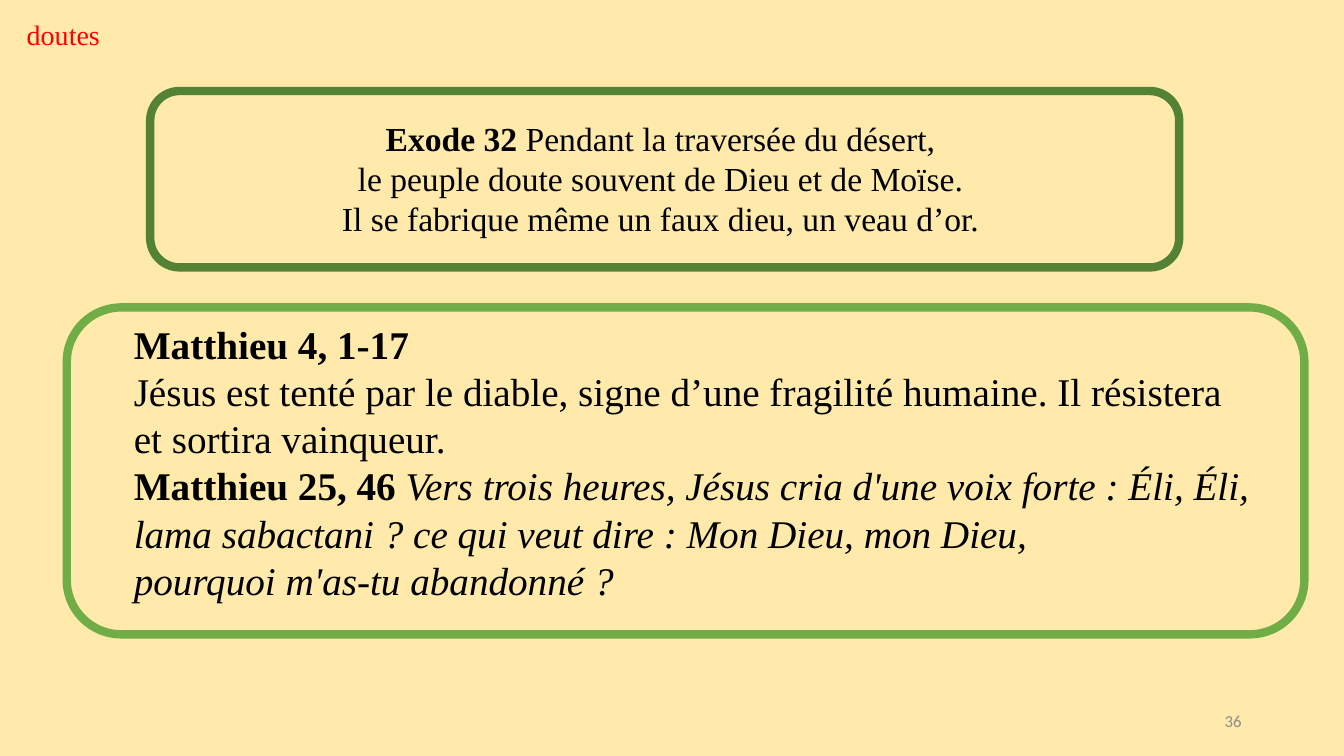
from pptx import Presentation
from pptx.dml.color import RGBColor
from pptx.enum.shapes import MSO_SHAPE
from pptx.enum.text import MSO_ANCHOR, PP_ALIGN
from pptx.util import Pt

COLORS = {
    "back": "FFEAAB",
    "label": "FF0000",
    "text": "000000",
    "number": "8C8C8C",
    "exodus": "548235",
    "matthew": "70AD47",
}
SERIF = "Times New Roman"

EXODUS = [
    [("Exode 32 ", "b"), ("Pendant la traversée du désert, ", "")],
    [("le peuple doute souvent de Dieu et de Moïse. ", "")],
    [("Il se fabrique même un faux dieu, un veau d’or. ", "")],
]
MATTHEW = [
    [("Matthieu 4, 1-17", "b")],
    [("Jésus est tenté par le diable, signe d’une fragilité humaine. "
      "Il résistera et sortira vainqueur.", "")],
    [("Matthieu 25, 46 ", "b"),
     ("Vers trois heures, Jésus cria d'une voix forte : Éli, Éli, "
      "lama sabactani ? ce qui veut dire : Mon Dieu, mon Dieu,", "i")],
    [("pourquoi m'as-tu abandonné ?", "i")],
]


def color(name):
    return RGBColor.from_string(COLORS[name])


def add_text(shapes, box, lines, size, tint="text", font=SERIF,
             align=PP_ALIGN.LEFT, anchor=MSO_ANCHOR.TOP):
    frame = shapes.add_textbox(*map(Pt, box)).text_frame
    frame.word_wrap = True
    frame.vertical_anchor = anchor
    for index, line in enumerate(lines):
        para = frame.add_paragraph() if index else frame.paragraphs[0]
        para.alignment = align
        para.font.name = font
        para.font.size = Pt(size)
        para.font.color.rgb = color(tint)
        for words, style in line:
            run = para.add_run()
            run.text = words
            if style == "b":
                run.font.bold = True
            elif style == "i":
                run.font.italic = True


def add_panel(slide, box, tint, inset, lines, size, align):
    shapes = slide.shapes.add_group_shape().shapes
    frame = shapes.add_shape(MSO_SHAPE.ROUNDED_RECTANGLE, *map(Pt, box))
    frame.shadow.inherit = False
    frame.fill.background()
    frame.line.color.rgb = color(tint)
    frame.line.width = Pt(6)
    left, top, width, height = box
    dx, dy, wide, high = inset
    add_text(shapes, (left + dx, top + dy, wide, high), lines, size, align=align)


def build_slide(deck):
    slide = deck.slides.add_slide(deck.slide_layouts[6])
    fill = slide.background.fill
    fill.solid()
    fill.fore_color.rgb = color("back")
    add_text(slide.shapes, (678, 500.5, 216, 28.75), [[("36", "")]], 12,
             "number", "Calibri", PP_ALIGN.RIGHT, MSO_ANCHOR.MIDDLE)
    add_text(slide.shapes, (12, 8.8, 71, 31.5), [[("doutes", "")]], 20, "label")
    add_panel(slide, (107.3, 65, 735, 126), "exodus",
              (29.5, 15.6, 676, 94.5), EXODUS, 24, PP_ALIGN.CENTER)
    add_panel(slide, (47.7, 219.6, 884, 233.5), "matthew",
              (40.8, 5.8, 812, 233.5), MATTHEW, 28, PP_ALIGN.LEFT)


def main():
    deck = Presentation()
    deck.slide_width = Pt(960)
    deck.slide_height = Pt(540)
    build_slide(deck)
    deck.save("out.pptx")


if __name__ == "__main__":
    main()
